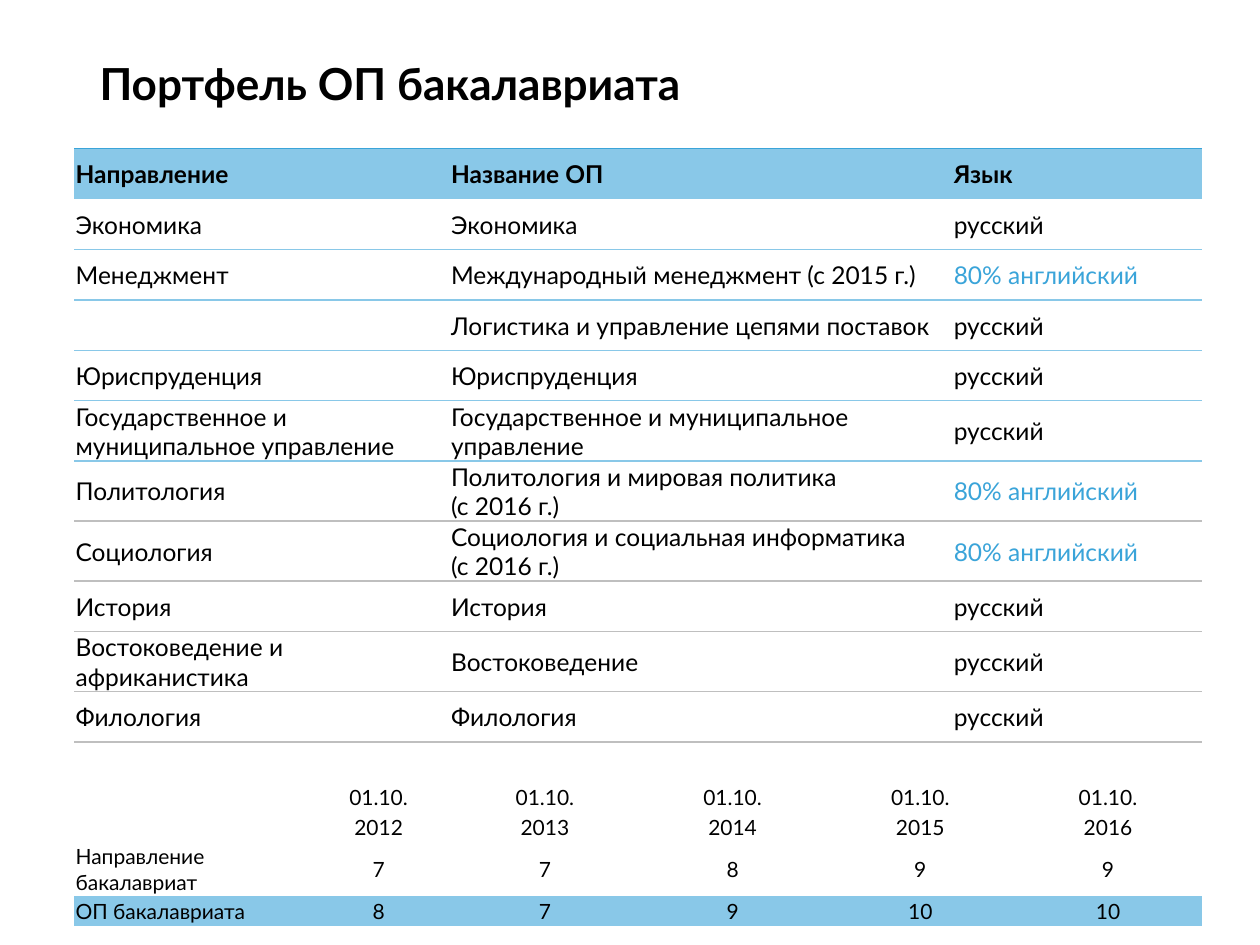
from lxml.etree import SubElement
from pptx import Presentation
from pptx.dml.color import RGBColor
from pptx.enum.text import MSO_ANCHOR as Anchor, PP_ALIGN as Align
from pptx.oxml.ns import qn
from pptx.util import Inches, Pt

FONT = "Lato"
BLACK, SKY, BLUE, GREY = "000000", "89C8E8", "3AA4D9", "BFBFBF"
NO_STYLE = "{2D5ABB26-0587-4C30-8999-92F81FD0307C}"
RUSSIAN, ENGLISH = "русский", "80% английский"

PROGRAMMES = [
    ("Направление", "Название ОП", "Язык"),
    ("Экономика", "Экономика", RUSSIAN),
    ("Менеджмент", "Международный менеджмент (с 2015 г.)", ENGLISH),
    ("", "Логистика и управление цепями поставок", RUSSIAN),
    ("Юриспруденция", "Юриспруденция", RUSSIAN),
    ("Государственное и муниципальное управление",
     "Государственное и муниципальное управление", RUSSIAN),
    ("Политология", "Политология и мировая политика\n(с 2016 г.)", ENGLISH),
    ("Социология", "Социология и социальная информатика\n(с 2016 г.)", ENGLISH),
    ("История", "История", RUSSIAN),
    ("Востоковедение и африканистика", "Востоковедение", RUSSIAN),
    ("Филология", "Филология", RUSSIAN),
]
TALL_ROWS = {5, 6, 7, 9}
LAST_BLUE_RULE = 5

COUNTS = [
    ("", *["01.10."] * 5),
    ("", "2012", "2013", "2014", "2015", "2016"),
    ("Направление бакалавриат", "7", "7", "8", "9", "9"),
    ("ОП бакалавриата", "8", "7", "9", "10", "10"),
]


def rgb(value):
    return RGBColor.from_string(value)


def add_span(para, text, size, color=BLACK, bold=False):
    span = para.add_run()
    span.text = text
    font = span.font
    font.name, font.size, font.bold = FONT, Pt(size), bold
    font.color.rgb = rgb(color)


def add_rule(cell, side, color):
    """Draw a 1 pt border on side lnT or lnB; call before filling the cell."""
    line = SubElement(cell._tc.get_or_add_tcPr(), qn(f"a:{side}"), w=str(Pt(1)))
    fill = SubElement(line, qn("a:solidFill"))
    SubElement(fill, qn("a:srgbClr"), val=color)


def write_cell(cell, text, size, color=BLACK, bold=False, align=Align.LEFT):
    cell.vertical_anchor = Anchor.MIDDLE
    cell.margin_left = cell.margin_right = cell.margin_top = Inches(0.01)
    cell.margin_bottom = 0
    frame = cell.text_frame
    for index, line in enumerate(text.split("\n")):
        para = frame.add_paragraph() if index else frame.paragraphs[0]
        para.alignment = align
        if line:
            add_span(para, line, size, color, bold)
        else:
            SubElement(para._p, qn("a:endParaRPr"), sz=str(size * 100))


def fill_cell(cell, color=None):
    if color:
        cell.fill.solid()
        cell.fill.fore_color.rgb = rgb(color)
    else:
        cell.fill.background()


def add_grid(page, left, top, widths, heights):
    """Add an unstyled table with the given column widths and row heights."""
    frame = page.shapes.add_table(
        len(heights), len(widths), Inches(left), Inches(top),
        Inches(sum(widths)), Inches(sum(heights)))
    table = frame.table
    table.first_row = table.horz_banding = False
    table._tbl.tblPr.find(qn("a:tableStyleId")).text = NO_STYLE
    for column, width in zip(table.columns, widths):
        column.width = Inches(width)
    for row, height in zip(table.rows, heights):
        row.height = Inches(height)
    return table


def add_title(page, left, top, width, height):
    title = page.shapes.title
    title.left, title.top = Inches(left), Inches(top)
    title.width, title.height = Inches(width), Inches(height)
    frame = title.text_frame
    frame.vertical_anchor = Anchor.MIDDLE
    para = frame.paragraphs[0]
    para.alignment = Align.LEFT
    add_span(para, "Портфель ОП бакалавриата", 25.2, bold=True)


def add_programmes(page, left, top):
    heights = [0.47 if row in TALL_ROWS else 0.4 for row in range(len(PROGRAMMES))]
    table = add_grid(page, left, top, [2.98, 3.99, 1.98], heights)
    for row, texts in enumerate(PROGRAMMES):
        header = row == 0
        for column, text in enumerate(texts):
            cell = table.cell(row, column)
            color = BLUE if text == ENGLISH else BLACK
            write_cell(cell, text, 14, color, bold=header)
            if header:
                add_rule(cell, "lnT", BLUE)
            else:
                add_rule(cell, "lnB", SKY if row <= LAST_BLUE_RULE else GREY)
            fill_cell(cell, SKY if header else None)


def add_counts(page, left, top):
    table = add_grid(page, left, top, [1.84, 1.15] + [1.49] * 4,
                     [0.24, 0.24, 0.43, 0.24])
    for row, texts in enumerate(COUNTS):
        for column, text in enumerate(texts):
            cell = table.cell(row, column)
            align = Align.CENTER if column else Align.LEFT
            write_cell(cell, text, 12, align=align)
            fill_cell(cell, SKY if row == len(COUNTS) - 1 else None)
    table.cell(0, 0).merge(table.cell(1, 0))


def main():
    deck = Presentation()
    deck.slide_width, deck.slide_height = Inches(10), Inches(7.5)
    page = deck.slides.add_slide(deck.slide_layouts[5])
    add_title(page, 0.69, 0.4, 8.62, 0.52)
    add_programmes(page, 0.59, 1.18)
    add_counts(page, 0.59, 6.2)
    deck.save("out.pptx")


if __name__ == "__main__":
    main()
